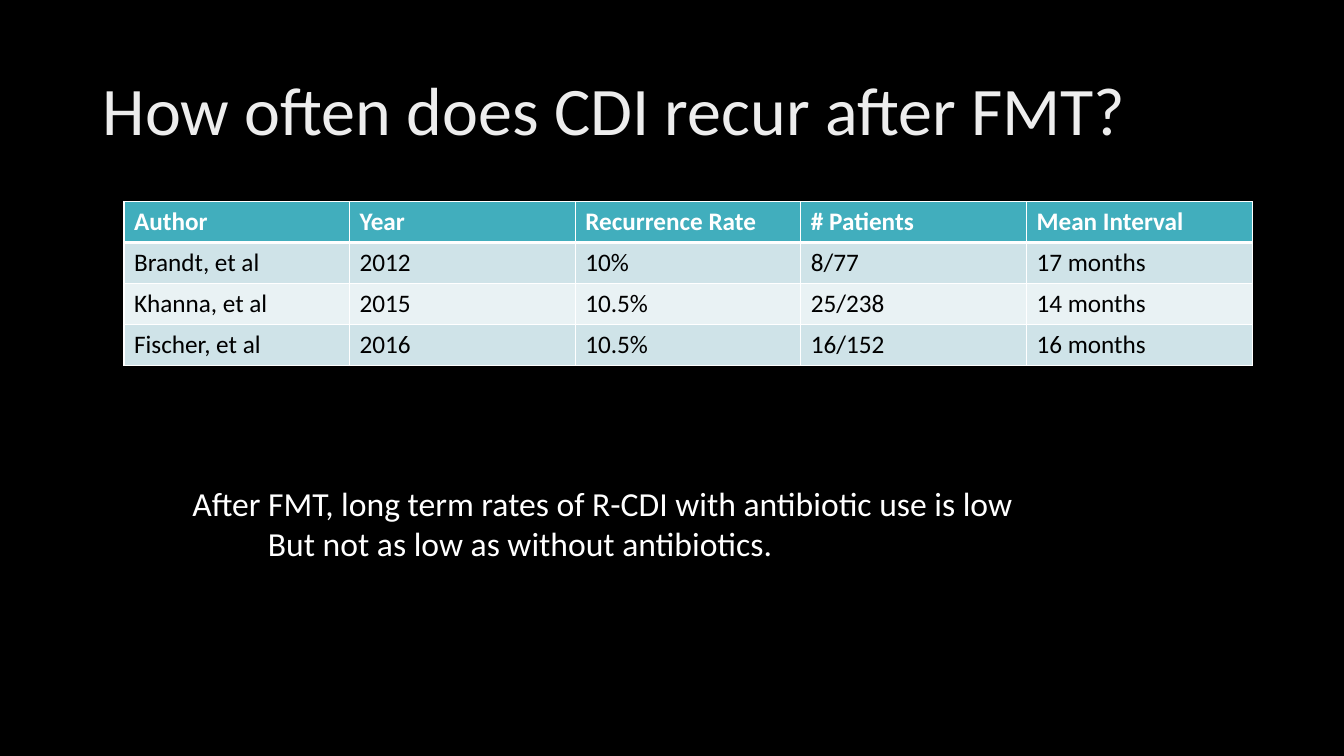
from lxml.etree import SubElement
from pptx import Presentation
from pptx.dml.color import RGBColor
from pptx.enum.text import MSO_ANCHOR, MSO_AUTO_SIZE, PP_ALIGN
from pptx.oxml.ns import qn
from pptx.util import Inches, Pt

COLORS = {
    "background": "000000",
    "title": "EDEDED",
    "light": "FFFFFF",
    "dark": "000000",
    "header": "41AEBD",
    "odd_row": "CFE3E8",
    "even_row": "E9F2F4",
}
STUDIES = [
    ["Author", "Year", "Recurrence Rate", "# Patients", "Mean Interval"],
    ["Brandt, et al", "2012", "10%", "8/77", "17 months"],
    ["Khanna, et al", "2015", "10.5%", "25/238", "14 months"],
    ["Fischer, et al", "2016", "10.5%", "16/152", "16 months"],
]


def style_text(para, size, color, bold=False):
    for span in para.runs:
        span.font.name = "Calibri"
        span.font.size = Pt(size)
        span.font.bold = bold
        span.font.color.rgb = RGBColor.from_string(COLORS[color])


def add_border(cell, side, width):
    """Draw one cell edge; side is L, R, T or B and width is in points."""
    line = SubElement(cell._tc.get_or_add_tcPr(), qn(f"a:ln{side}"), w=str(Pt(width)))
    fill = SubElement(line, qn("a:solidFill"))
    SubElement(fill, qn("a:srgbClr"), val=COLORS["light"])


deck = Presentation()
deck.slide_width = Inches(13.33)
deck.slide_height = Inches(7.5)
page = deck.slides.add_slide(deck.slide_layouts[5])
page.background.fill.solid()
page.background.fill.fore_color.rgb = RGBColor.from_string(COLORS["background"])

title = page.shapes.title
title.left, title.top = Inches(0.92), Inches(0.4)
title.width, title.height = Inches(11.5), Inches(1.45)
title.text_frame.text = "How often does CDI recur after FMT?"
title.text_frame.auto_size = MSO_AUTO_SIZE.NONE
title.text_frame.vertical_anchor = MSO_ANCHOR.MIDDLE
heading = title.text_frame.paragraphs[0]
heading.alignment = PP_ALIGN.LEFT
heading.line_spacing = 0.9
style_text(heading, 48.6, "title")

table = page.shapes.add_table(
    len(STUDIES), len(STUDIES[0]), Inches(1.23), Inches(2), Inches(11.19), Inches(1.62)
).table
for row_index, study in enumerate(STUDIES):
    is_header = row_index == 0
    if is_header:
        fill_color = "header"
    else:
        fill_color = "odd_row" if row_index % 2 else "even_row"
    for column_index, value in enumerate(study):
        cell = table.cell(row_index, column_index)
        cell.text = value
        style_text(cell.text_frame.paragraphs[0], 18,
                   "light" if is_header else "dark", is_header)
        add_border(cell, "L", 1)
        add_border(cell, "R", 1)
        add_border(cell, "T", 3 if row_index == 1 else 1)
        add_border(cell, "B", 3 if is_header else 1)
        cell.fill.solid()
        cell.fill.fore_color.rgb = RGBColor.from_string(COLORS[fill_color])

box = page.shapes.add_textbox(Inches(1.81), Inches(4.74), Inches(9.46), Inches(0.91))
box.text_frame.word_wrap = True
box.text_frame.text = (
    "After FMT, long term rates of R-CDI with antibiotic use is low\n"
    "But not as low as without antibiotics."
)
for para in box.text_frame.paragraphs:
    style_text(para, 24, "light")
caveat = box.text_frame.paragraphs[1]
caveat._p.get_or_add_pPr().set("marL", str(Inches(0.75)))

deck.save("out.pptx")
